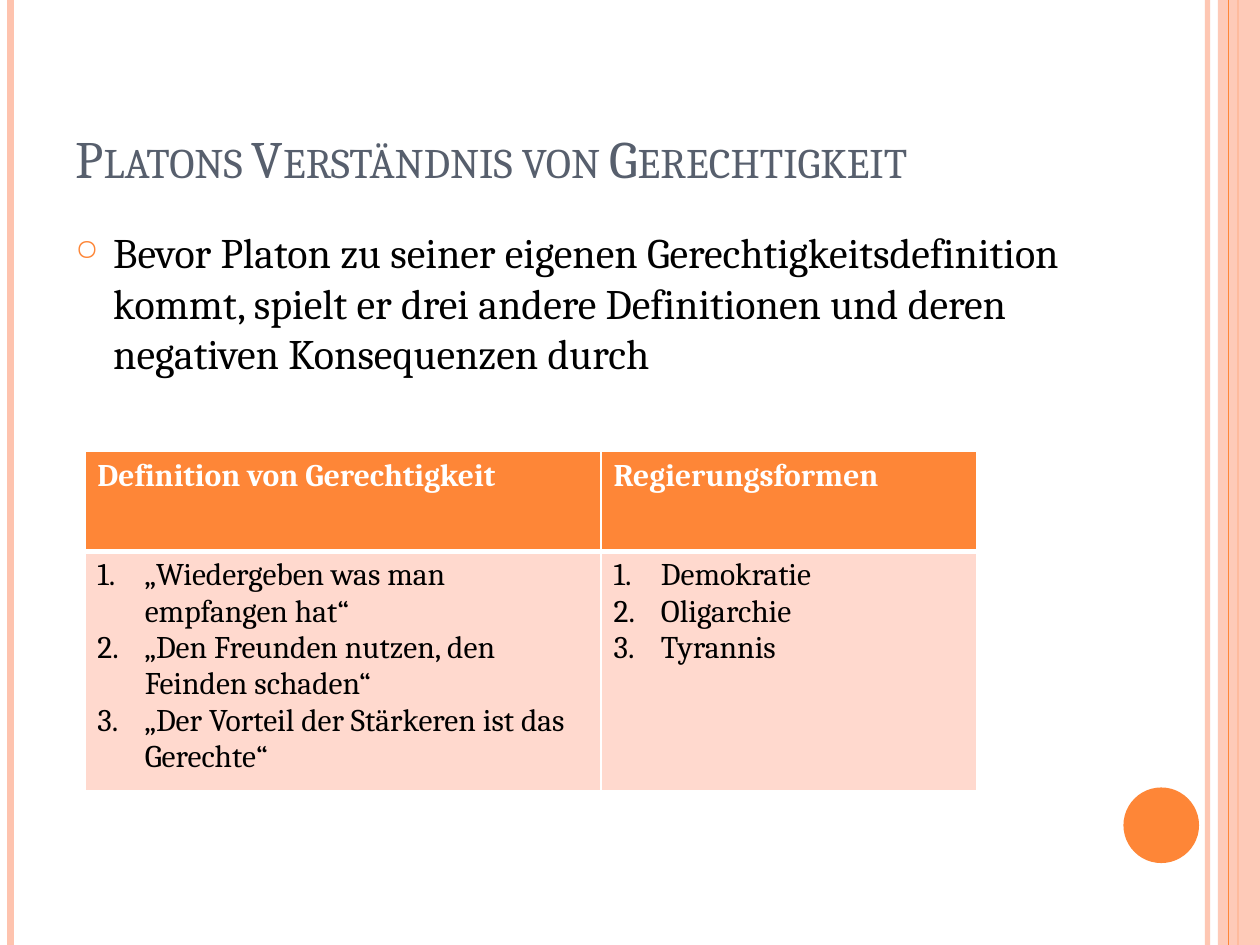
import dataclasses
import typing

import lxml.etree
import pptx
import pptx.dml.color
import pptx.enum.shapes
import pptx.enum.text
import pptx.oxml
import pptx.oxml.ns
import pptx.util

Pt = pptx.util.Pt
qn = pptx.oxml.ns.qn

FONT = "Cambria"
SLIDE_WIDTH, SLIDE_HEIGHT = 720, 540
COLORS = {
    "orange": "FE8637",
    "peach": "FEC3AE",
    "pale": "FFD9CE",
    "slate": "575F6D",
    "black": "000000",
    "white": "FFFFFF",
}


@dataclasses.dataclass
class Stripe:
    x: float
    width: float
    color: str
    opacity: int = 100


@dataclasses.dataclass
class Panel:
    kind: pptx.enum.shapes.MSO_SHAPE
    left: float
    top: float
    width: float
    height: float
    color: str
    opacity: int = 100


@dataclasses.dataclass
class Column:
    width: float
    heading: str
    items: list[str]


BACK_STRIPES = [
    Stripe(690, 3, "peach", 93),
    Stripe(6, 4.5, "peach"),
    Stripe(707.5, 1.5, "orange"),
]
FRONT_STRIPES = [Stripe(702, 0.75, "orange")]
SIDE_BAND = Panel(pptx.enum.shapes.MSO_SHAPE.RECTANGLE, 696, 0, 24, SLIDE_HEIGHT, "peach", 87)
DISC = Panel(pptx.enum.shapes.MSO_SHAPE.OVAL, 642, 450, 43.2, 43.2, "orange")
COLUMNS = [
    Column(295, "Definition von Gerechtigkeit", [
        "„Wiedergeben was man empfangen hat“",
        "„Den Freunden nutzen, den Feinden schaden“",
        "„Der Vorteil der Stärkeren ist das Gerechte“",
    ]),
    Column(214.5, "Regierungsformen", ["Demokratie", "Oligarchie", "Tyrannis"]),
]
ROW_HEIGHTS = [57, 135]


def rgb(name: str) -> pptx.dml.color.RGBColor:
    return pptx.dml.color.RGBColor.from_string(COLORS[name])


def add_element(parent: typing.Any, tag: str, **attributes: str) -> typing.Any:
    element = lxml.etree.SubElement(parent, qn(tag))
    for name, value in attributes.items():
        element.set(name, value)
    return element


def set_opacity(shape: typing.Any, percent: int) -> None:
    if percent < 100:
        color = next(shape._element.spPr.iter(qn("a:srgbClr")))
        add_element(color, "a:alpha", val=str(percent * 1000))


def draw_stripe(slide: typing.Any, stripe: Stripe) -> None:
    connector = slide.shapes.add_connector(
        pptx.enum.shapes.MSO_CONNECTOR.STRAIGHT,
        Pt(stripe.x), Pt(0), Pt(stripe.x), Pt(SLIDE_HEIGHT))
    connector.line.width = Pt(stripe.width)
    connector.line.color.rgb = rgb(stripe.color)
    set_opacity(connector, stripe.opacity)
    add_element(connector._element.spPr, "a:effectLst")


def draw_panel(slide: typing.Any, panel: Panel) -> None:
    shape = slide.shapes.add_shape(
        panel.kind, Pt(panel.left), Pt(panel.top), Pt(panel.width), Pt(panel.height))
    shape.shadow.inherit = False
    shape.fill.solid()
    shape.fill.fore_color.rgb = rgb(panel.color)
    shape.line.fill.background()
    set_opacity(shape, panel.opacity)


def set_font(paragraph: typing.Any, size: float, color: str, bold: bool = False) -> None:
    paragraph.font.name = FONT
    paragraph.font.size = Pt(size)
    paragraph.font.bold = bold
    paragraph.font.color.rgb = rgb(color)


def set_indent(paragraph: typing.Any, indent: float) -> typing.Any:
    properties = paragraph._p.get_or_add_pPr()
    properties.set("marL", str(Pt(indent)))
    properties.set("indent", str(-Pt(indent)))
    return properties


def write_title(slide: typing.Any) -> None:
    title = slide.shapes.title
    title.left, title.top, title.width, title.height = Pt(36), Pt(21.6), Pt(588), Pt(90)
    frame = title.text_frame
    frame.text = "Platons Verständnis von Gerechtigkeit"
    frame.vertical_anchor = pptx.enum.text.MSO_ANCHOR.BOTTOM
    paragraph = frame.paragraphs[0]
    paragraph.alignment = pptx.enum.text.PP_ALIGN.LEFT
    set_font(paragraph, 30, "slate")
    paragraph.runs[0].font._element.set("cap", "small")


def write_body(slide: typing.Any) -> None:
    frame = slide.shapes.add_textbox(Pt(36), Pt(126), Pt(588), Pt(384)).text_frame
    frame.word_wrap = True
    paragraph = frame.paragraphs[0]
    paragraph.text = ("Bevor Platon zu seiner eigenen Gerechtigkeitsdefinition kommt, "
                      "spielt er drei andere Definitionen und deren negativen "
                      "Konsequenzen durch")
    paragraph.space_before = Pt(6)
    properties = set_indent(paragraph, 21.6)
    bullet_color = add_element(properties, "a:buClr")
    add_element(bullet_color, "a:srgbClr", val=COLORS["orange"])
    add_element(properties, "a:buSzPct", val="70000")
    add_element(properties, "a:buChar", char="○")
    set_font(paragraph, 24, "black")


def style_cell(cell: typing.Any, color: str, bottom_width: float) -> None:
    properties = cell._tc.get_or_add_tcPr()
    for side, width in {"L": 1, "R": 1, "T": 1, "B": bottom_width}.items():
        border = add_element(properties, f"a:ln{side}", w=str(Pt(width)))
        fill = add_element(border, "a:solidFill")
        add_element(fill, "a:srgbClr", val=COLORS["white"])
    cell.fill.solid()
    cell.fill.fore_color.rgb = rgb(color)


def draw_table(slide: typing.Any) -> None:
    table = slide.shapes.add_table(
        len(ROW_HEIGHTS), len(COLUMNS), Pt(48.5), Pt(258),
        Pt(sum(column.width for column in COLUMNS)), Pt(sum(ROW_HEIGHTS))).table
    for row, height in zip(table.rows, ROW_HEIGHTS):
        row.height = Pt(height)
    for index, column in enumerate(COLUMNS):
        table.columns[index].width = Pt(column.width)
        heading, content = table.cell(0, index), table.cell(1, index)
        style_cell(heading, "orange", 3)
        style_cell(content, "pale", 1)
        heading.text = column.heading
        set_font(heading.text_frame.paragraphs[0], 18, "white", True)
        content.text = "\n".join(column.items)
        for paragraph in content.text_frame.paragraphs:
            properties = set_indent(paragraph, 27)
            add_element(properties, "a:buAutoNum", type="arabicPeriod")
            set_font(paragraph, 18, "black")


def main() -> None:
    presentation = pptx.Presentation()
    presentation.slide_width = Pt(SLIDE_WIDTH)
    presentation.slide_height = Pt(SLIDE_HEIGHT)
    slide = presentation.slides.add_slide(presentation.slide_layouts[5])
    for stripe in BACK_STRIPES:
        draw_stripe(slide, stripe)
    draw_panel(slide, SIDE_BAND)
    for stripe in FRONT_STRIPES:
        draw_stripe(slide, stripe)
    draw_panel(slide, DISC)
    write_title(slide)
    write_body(slide)
    draw_table(slide)
    presentation.save("out.pptx")


if __name__ == "__main__":
    main()
